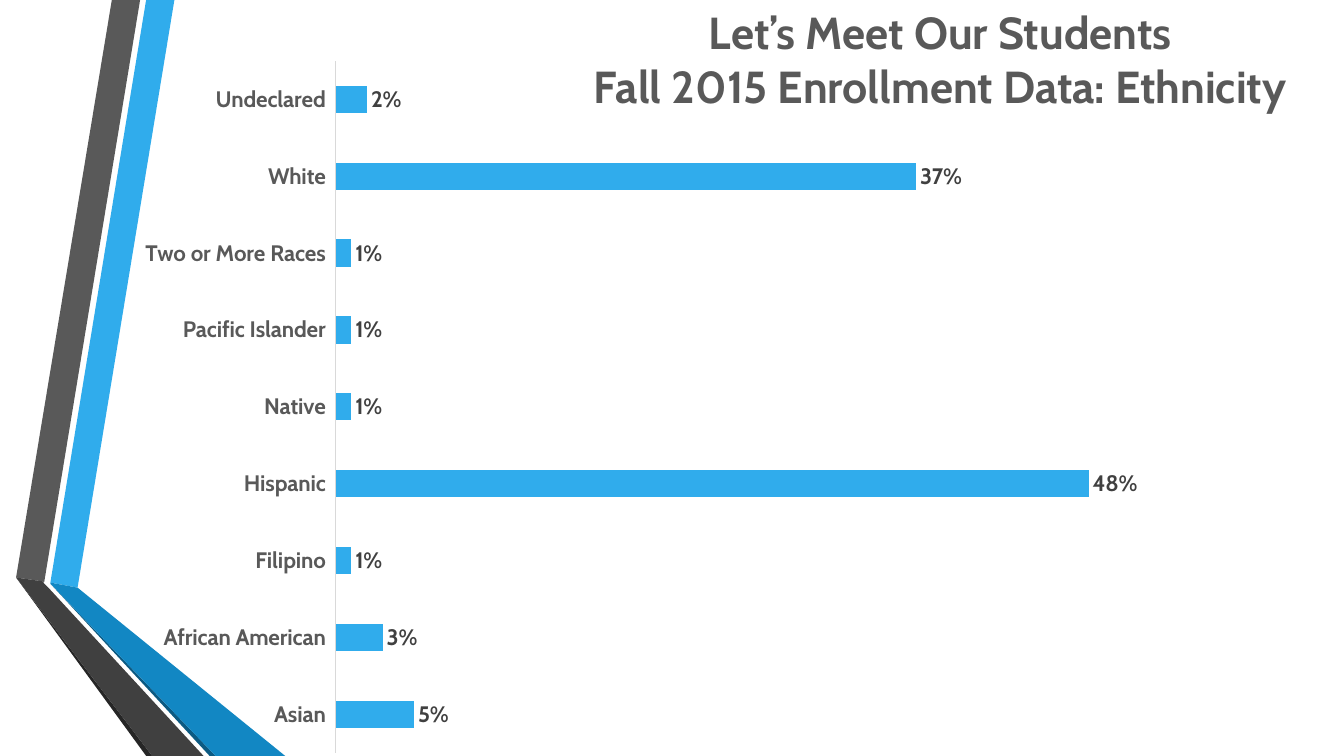
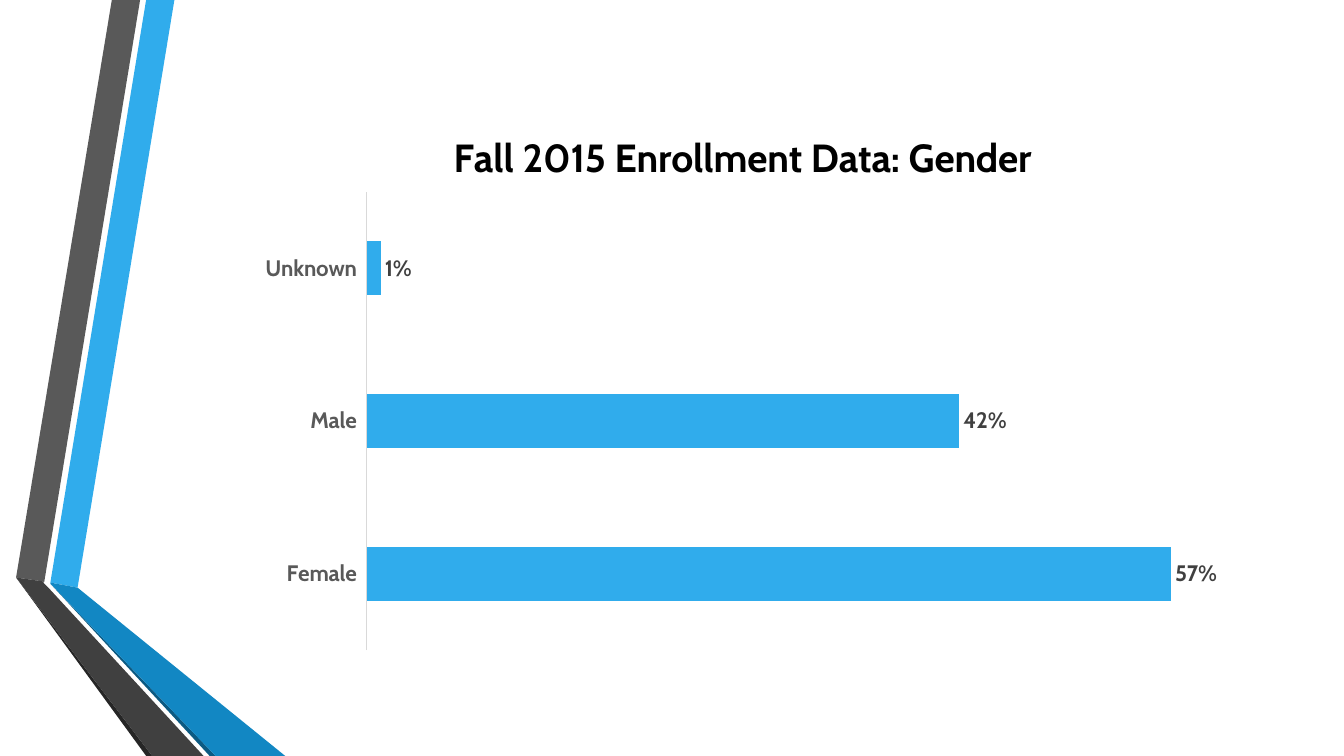
from lxml import etree
from pptx import Presentation
from pptx.chart.data import CategoryChartData
from pptx.dml.color import RGBColor
from pptx.enum.chart import XL_CHART_TYPE, XL_LABEL_POSITION, XL_TICK_LABEL_POSITION, XL_TICK_MARK
from pptx.enum.text import MSO_ANCHOR, MSO_AUTO_SIZE, PP_ALIGN
from pptx.oxml.ns import qn
from pptx.util import Inches, Pt

BAR = XL_CHART_TYPE.BAR_CLUSTERED
OUTSIDE = XL_LABEL_POSITION.OUTSIDE_END
LABELS_LOW = XL_TICK_LABEL_POSITION.LOW
NO_TICK = XL_TICK_MARK.NONE
TOP = MSO_ANCHOR.TOP
NO_FIT = MSO_AUTO_SIZE.NONE
CENTER = PP_ALIGN.CENTER

FONT = "Cabin"
COLORS = {
    "blue": "30ACEC", "deep_blue": "1287C3", "navy": "0C5A82",
    "gray": "595959", "dark_gray": "404040", "charcoal": "262626",
    "rule": "D9D9D9", "black": "000000",
}
TITLE_ONLY, BLANK = 5, 6

# Folded ribbons: corners on a grid of 100 units per inch
GRID = Inches(1) / 100
RIBBONS = [
    ("blue", [(50, 578), (77, 583), (173, 0), (145, 0)]),
    ("gray", [(139, 0), (111, 0), (16, 573), (44, 577)]),
    ("charcoal", [(16, 573), (145, 750), (151, 750)]),
    ("navy", [(50, 579), (208, 750), (214, 750)]),
    ("deep_blue", [(50, 578), (50, 579), (214, 750), (283, 750), (77, 583)]),
    ("dark_gray", [(202, 750), (48, 583), (43, 578), (44, 577), (16, 573), (151, 750)]),
]


def color(name):
    return RGBColor.from_string(COLORS[name])


class EnrollmentDeck:
    """Shared style plus the slide being built."""

    def __init__(self):
        self.deck = Presentation()
        self.deck.slide_width, self.deck.slide_height = Inches(13.33), Inches(7.5)
        self.page = None

    def add_page(self, layout):
        self.page = self.deck.slides.add_slide(self.deck.slide_layouts[layout])

    def place(self, left, top, width, height):
        """Turn percentages of the slide into lengths."""
        across, down = self.deck.slide_width / 100, self.deck.slide_height / 100
        return [int(left * across), int(top * down), int(width * across), int(height * down)]

    def style(self, font, size, tone):
        font.name, font.size, font.bold = FONT, Pt(size), True
        font.color.rgb = color(tone)

    def ribbons(self):
        """Draw the ribbons and move them to the master, behind its placeholders."""
        tree = self.deck.slide_master.element.cSld.spTree
        for number, (tone, corners) in enumerate(RIBBONS):
            outline = self.page.shapes.build_freeform(*corners[0], scale=GRID)
            outline.add_line_segments(corners[1:], close=True)
            ribbon = outline.convert_to_shape()
            ribbon.shadow.inherit = False
            ribbon.fill.solid()
            ribbon.fill.fore_color.rgb = color(tone)
            ribbon.line.fill.background()
            ribbon.element.nvSpPr.cNvPr.set("id", str(100 + number))
            tree.insert(2 + number, ribbon.element)

    def title(self, area, lines):
        box = self.page.shapes.title
        box.left, box.top, box.width, box.height = self.place(*area)
        frame = box.text_frame
        frame.text = "\n".join(lines)
        frame.auto_size, frame.vertical_anchor, frame.word_wrap = NO_FIT, TOP, False
        for para in frame.paragraphs:
            para.alignment, para.line_spacing = CENTER, 1.0
            para.space_before = Pt(0)
            for span in para.runs:
                self.style(span.font, 32, "gray")

    def bar_chart(self, area, plot_area, shares, heading=None):
        data = CategoryChartData(number_format="0%")
        data.categories = list(shares)
        data.add_series("Series 1", list(shares.values()))
        chart = self.page.shapes.add_chart(BAR, *self.place(*area), data).chart
        self.style(chart.font, 10, "black")
        chart.has_legend = False

        # Heading
        chart.has_title = heading is not None
        if heading:
            frame = chart.chart_title.text_frame
            frame.text = heading
            self.style(frame.paragraphs[0].runs[0].font, 28, "black")
            chart.chart_title.include_in_layout = False

        # Axes
        names, values = chart.category_axis, chart.value_axis
        names.major_tick_mark = names.minor_tick_mark = NO_TICK
        names.tick_label_position = LABELS_LOW
        names.has_major_gridlines = False
        names.format.line.color.rgb = color("rule")
        names.format.line.width = Pt(0.75)
        self.style(names.tick_labels.font, 16, "gray")
        values.minimum_scale, values.maximum_scale = 0, 0.6
        values.has_major_gridlines = False
        values.visible = False

        # Bars and their labels
        plot = chart.plots[0]
        plot.gap_width, plot.vary_by_categories = 182, False
        bars = plot.series[0]
        bars.format.fill.solid()
        bars.format.fill.fore_color.rgb = color("blue")
        plot.has_data_labels = True
        labels = plot.data_labels
        labels.show_value, labels.position = True, OUTSIDE
        labels.number_format, labels.number_format_is_linked = "0%", False
        self.style(labels.font, 16, "dark_gray")
        self.fix_plot(chart, plot_area)

    def fix_plot(self, chart, plot_area):
        """Pin the inner plot area, given in percent of the chart."""
        area = chart.element.find(".//" + qn("c:plotArea"))
        for old in area.findall(qn("c:layout")):
            area.remove(old)
        layout = etree.Element(qn("c:layout"))
        area.insert(0, layout)
        manual = etree.SubElement(layout, qn("c:manualLayout"))
        settings = [("layoutTarget", "inner"), ("xMode", "edge"), ("yMode", "edge")]
        settings += [(key, str(share / 100)) for key, share in zip("xywh", plot_area)]
        for key, value in settings:
            etree.SubElement(manual, qn("c:" + key)).set("val", value)


def main():
    show = EnrollmentDeck()

    # Ethnicity
    show.add_page(TITLE_ONLY)
    show.ribbons()
    show.bar_chart(
        (9.23, 6.93, 87, 95.6), (18.1, 1.2, 80.5, 95.7),
        {"Asian": 0.05, "African American": 0.03, "Filipino": 0.01,
         "Hispanic": 0.48, "Native": 0.01, "Pacific Islander": 0.01,
         "Two or More Races": 0.01, "White": 0.37, "Undeclared": 0.02})
    show.title((43.2, 0, 53.55, 15.73),
               ["Let’s Meet Our Students", "Fall 2015 Enrollment Data: Ethnicity"])

    # Gender
    show.add_page(BLANK)
    show.bar_chart(
        (18.75, 14.13, 73, 73.33), (11.7, 15.4, 86.3, 82.6),
        {"Female": 0.57, "Male": 0.42, "Unknown": 0.01},
        heading="Fall 2015 Enrollment Data: Gender")

    show.deck.save("out.pptx")


if __name__ == "__main__":
    main()
